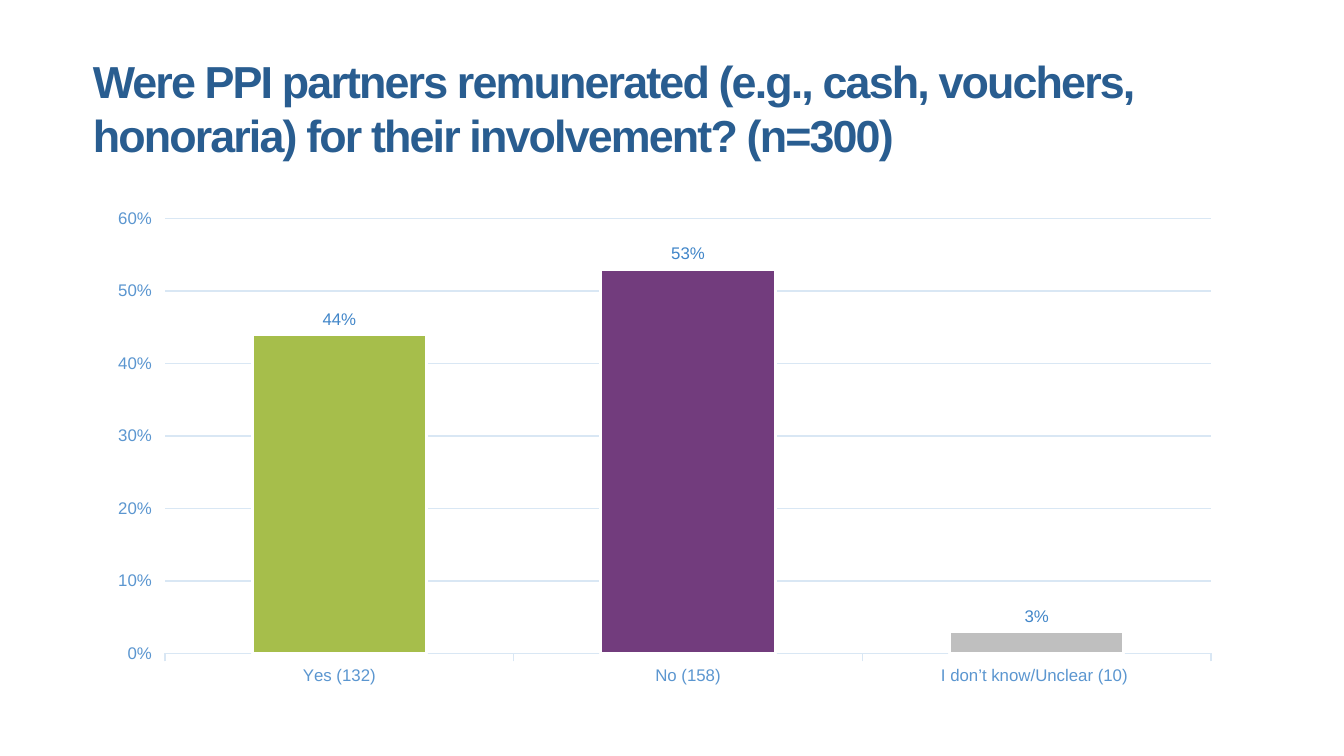
from dataclasses import dataclass

from pptx import Presentation
from pptx.chart.data import CategoryChartData
from pptx.dml.color import RGBColor
from pptx.enum.chart import XL_CHART_TYPE, XL_LABEL_POSITION, XL_TICK_MARK
from pptx.enum.text import MSO_ANCHOR
from pptx.util import Inches, Pt

COLUMNS = XL_CHART_TYPE.COLUMN_CLUSTERED
OUTSIDE_END = XL_LABEL_POSITION.OUTSIDE_END
TICK_OUTSIDE = XL_TICK_MARK.OUTSIDE
BOTTOM = MSO_ANCHOR.BOTTOM

SLIDE_WIDTH = Inches(10)
SLIDE_HEIGHT = SLIDE_WIDTH * 9 // 16
FONT = "Arial"
NAVY = "295D90"
AXIS_BLUE = "5B96D0"
LABEL_BLUE = "4186C9"
GRID_BLUE = "D9E7F4"
WHITE = "FFFFFF"
PERCENT = "0%"
TITLE = (
    "Were PPI partners remunerated (e.g., cash, vouchers, "
    "honoraria) for their involvement? (n=300)"
)


@dataclass(frozen=True)
class Answer:
    label: str
    share: float
    color: str


ANSWERS = [
    Answer("Yes (132)", 0.44, "A6BE4B"),
    Answer("No (158)", 0.53, "723C7D"),
    Answer("I don’t know/Unclear (10) ", 0.03, "BFBFBF"),
]


def rgb(color: str) -> RGBColor:
    return RGBColor.from_string(color)


def set_attributes(target, values: dict) -> None:
    for name, value in values.items():
        setattr(target, name, value)


def style_font(font, size: float, color: str, bold: bool = False) -> None:
    set_attributes(font, {"name": FONT, "size": Pt(size), "bold": bold})
    font.color.rgb = rgb(color)


def style_line(line, color: str, width: float) -> None:
    line.color.rgb = rgb(color)
    line.width = Pt(width)


def add_title(slide) -> None:
    box = slide.shapes.add_textbox(
        Inches(0.69), Inches(0.11), Inches(8.45), Inches(1.09)
    )
    set_attributes(box.text_frame, {
        "word_wrap": True,
        "vertical_anchor": BOTTOM,
        "margin_left": 0,
        "margin_right": 0,
        "margin_top": 0,
        "margin_bottom": 0,
    })
    para = box.text_frame.paragraphs[0]
    para.line_spacing = 1.0
    span = para.add_run()
    span.text = TITLE
    style_font(span.font, 24, NAVY, bold=True)
    span.font._element.set("spc", "-100")


def style_axes(chart) -> None:
    for axis in (chart.category_axis, chart.value_axis):
        axis.major_tick_mark = TICK_OUTSIDE
        style_font(axis.tick_labels.font, 9, AXIS_BLUE)
    style_line(chart.category_axis.format.line, GRID_BLUE, 0.75)

    axis = chart.value_axis
    set_attributes(axis, {
        "minimum_scale": 0,
        "maximum_scale": 0.6,
        "major_unit": 0.1,
        "has_major_gridlines": True,
    })
    set_attributes(axis.tick_labels, {
        "number_format": PERCENT,
        "number_format_is_linked": False,
    })
    axis.format.line.fill.background()
    style_line(axis.major_gridlines.format.line, GRID_BLUE, 0.75)


def style_columns(plot, answers: list[Answer]) -> None:
    set_attributes(plot, {
        "gap_width": 100,
        "vary_by_categories": False,
        "has_data_labels": True,
    })
    set_attributes(plot.data_labels, {
        "show_value": True,
        "position": OUTSIDE_END,
        "number_format": PERCENT,
        "number_format_is_linked": False,
    })
    style_font(plot.data_labels.font, 9, LABEL_BLUE)
    for index, answer in enumerate(answers):
        column = plot.series[0].points[index].format
        column.fill.solid()
        column.fill.fore_color.rgb = rgb(answer.color)
        style_line(column.line, WHITE, 1.5)


def add_answer_chart(slide, answers: list[Answer]) -> None:
    data = CategoryChartData(number_format=PERCENT)
    data.categories = [answer.label for answer in answers]
    data.add_series("Series 1", [answer.share for answer in answers])
    chart = slide.shapes.add_chart(
        COLUMNS, Inches(0.71), Inches(1.48), Inches(8.47), Inches(3.7), data
    ).chart
    set_attributes(chart, {"has_legend": False, "has_title": False})
    style_font(chart.font, 10, NAVY)
    style_axes(chart)
    style_columns(chart.plots[0], answers)


def main() -> None:
    deck = Presentation()
    deck.slide_width = SLIDE_WIDTH
    deck.slide_height = SLIDE_HEIGHT
    slide = deck.slides.add_slide(deck.slide_layouts[6])
    add_title(slide)
    add_answer_chart(slide, ANSWERS)
    deck.save("out.pptx")


if __name__ == "__main__":
    main()
